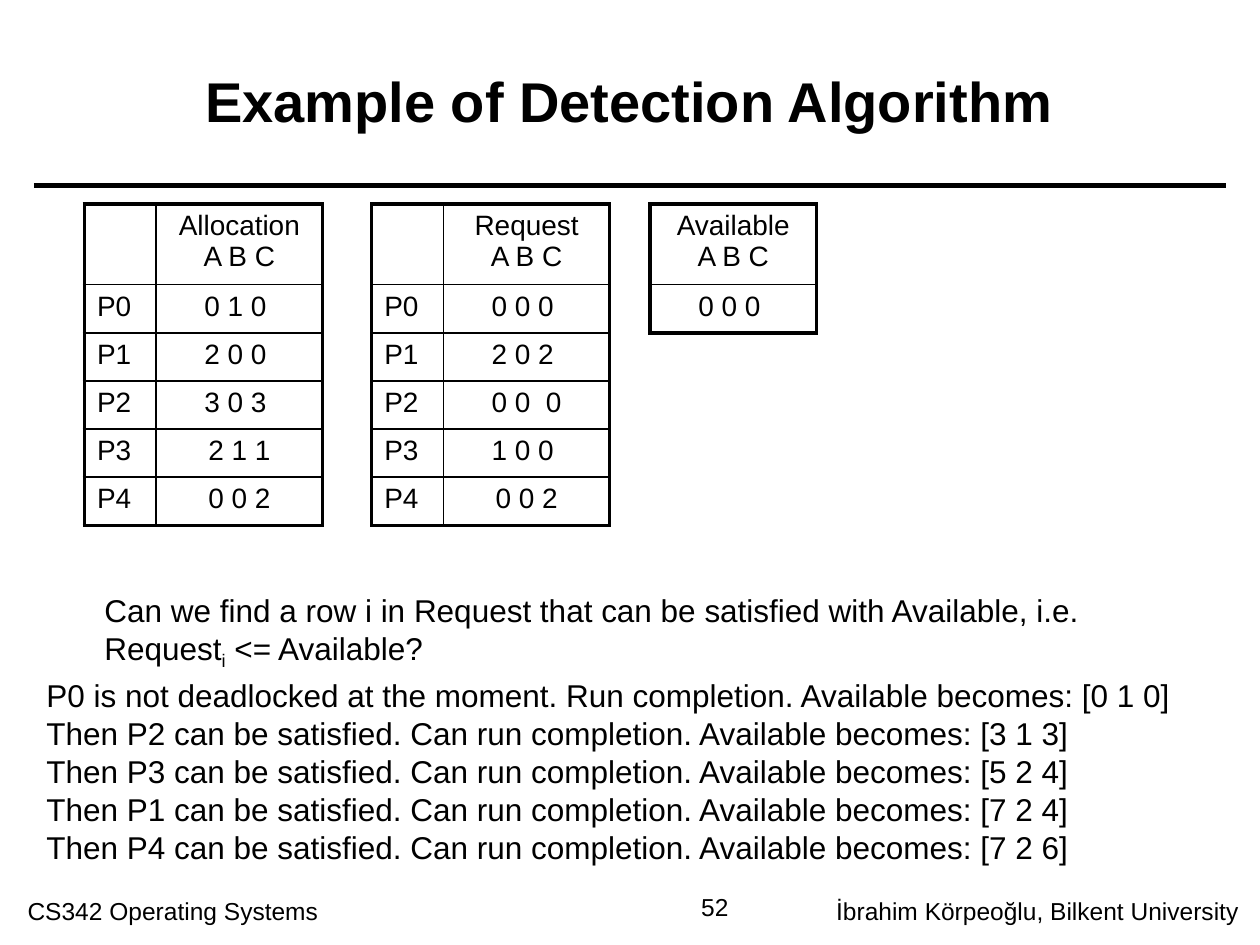
from lxml import etree
from pptx import Presentation
from pptx.dml.color import RGBColor
from pptx.enum.shapes import MSO_CONNECTOR
from pptx.enum.text import MSO_ANCHOR, PP_ALIGN
from pptx.oxml.ns import qn
from pptx.util import Inches, Pt

BLACK = RGBColor(0, 0, 0)
WHITE = RGBColor(255, 255, 255)
LEFT, MID, RIGHT = PP_ALIGN.LEFT, PP_ALIGN.CENTER, PP_ALIGN.RIGHT
TOP, CENTER = MSO_ANCHOR.TOP, MSO_ANCHOR.MIDDLE
STRAIGHT = MSO_CONNECTOR.STRAIGHT
COLS, ROWS = 100, 75
THICK, THIN = 2.25, 1
HEAD, LINE = 6.4, 3.82  # table row heights in grid rows
TAG, DATA = 5.7, 13.2  # table column widths in grid columns


class Page:
    """Draws on one slide; lengths are columns and rows of a fine grid."""

    def __init__(self, deck):
        self.font = "Arial"
        self.dx = deck.slide_width / COLS
        self.dy = deck.slide_height / ROWS
        self.slide = deck.slides.add_slide(deck.slide_layouts[6])
        fill = self.slide.background.fill
        fill.solid()
        fill.fore_color.rgb = WHITE

    def box(self, x, y, w, h):
        return (round(x * self.dx), round(y * self.dy),
                round(w * self.dx), round(h * self.dy))

    def style(self, para, size, align=LEFT, bold=False):
        para.alignment = align
        font = para.font
        font.name, font.size, font.bold = self.font, Pt(size), bold
        font.color.rgb = BLACK

    def rule(self, x, y, end, width):
        a, b, c, _ = self.box(x, y, end, 0)
        line = self.slide.shapes.add_connector(STRAIGHT, a, b, c, b)
        line.line.color.rgb = BLACK
        line.line.width = Pt(width)
        etree.SubElement(line._element.spPr, qn("a:effectLst"))

    def text(self, area, lines, size, align=LEFT, bold=False,
             anchor=TOP, wrap=True):
        """Each line is a string or a list of (string, is subscript) pairs."""
        frame = self.slide.shapes.add_textbox(*self.box(*area)).text_frame
        frame.word_wrap = wrap
        frame.vertical_anchor = anchor
        for i, line in enumerate(lines):
            para = frame.add_paragraph() if i else frame.paragraphs[0]
            self.style(para, size, align, bold)
            parts = [(line, False)] if isinstance(line, str) else line
            for words, sub in parts:
                if words == "\n":
                    para.add_line_break()
                    continue
                run = para.add_run()
                run.text = words
                if sub:
                    run._r.get_or_add_rPr().set("baseline", "-25000")

    def edge(self, cell, sides):
        """Put borders, given as widths by side, ahead of the cell's fill."""
        props = cell._tc.get_or_add_tcPr()
        for i, (side, width) in enumerate(sides.items()):
            line = etree.Element(qn("a:ln" + side), w=str(Pt(width)))
            fill = etree.SubElement(line, qn("a:solidFill"))
            etree.SubElement(fill, qn("a:srgbClr"), val=str(BLACK))
            props.insert(i, line)

    def table(self, x, y, widths, rows):
        last, end = len(rows) - 1, len(widths) - 1
        area = self.box(x, y, sum(widths), HEAD + LINE * last)
        grid = self.slide.shapes.add_table(last + 1, end + 1, *area).table
        grid.first_row = grid.horz_banding = False
        for col, width in zip(grid.columns, widths):
            col.width = round(width * self.dx)
        for r, row in enumerate(rows):
            grid.rows[r].height = round((LINE if r else HEAD) * self.dy)
            for c, words in enumerate(row):
                cell = grid.cell(r, c)
                cell.fill.background()
                para = cell.text_frame.paragraphs[0]
                para.text = words
                self.style(para, 16, MID if c == end else LEFT)
                self.edge(cell, {
                    "L": THIN if c else THICK,
                    "R": THICK if c == end else THIN,
                    "T": THIN if r else THICK,
                    "B": THICK if r == last else THIN})


def tagged(name, values):
    """Rows of a table that names the processes in its first column."""
    return [("", name + "\vA B C")] + [
        (f"P{i}", value) for i, value in enumerate(values)]


def main():
    deck = Presentation()
    deck.slide_width, deck.slide_height = Inches(10), Inches(7.5)
    page = Page(deck)

    page.rule(2.7, 14.7, 97.3, 3)
    page.text((1.2, 70.6, 47.2, 3.9), ["CS342 Operating Systems"], 14)
    page.text((65, 70.6, 34.7, 3.6),
              ["İbrahim Körpeoğlu, Bilkent University"], 14, MID)
    page.text((48.4, 70.3, 10.4, 3.4), ["52"], 14, RIGHT)
    page.text((3.5, 1.7, 92.9, 12.5), ["Example of Detection Algorithm"],
              32, MID, True, CENTER)

    held = ["0 1 0 ", "2 0 0 ", "3 0 3 ", "2 1 1", "0 0 2"]
    asked = ["0 0 0 ", "2 0 2 ", "0 0  0", "1 0 0 ", "0 0 2"]
    page.table(6.7, 16.2, [TAG, DATA], tagged("Allocation", held))
    page.table(29.5, 16.2, [TAG, DATA], tagged("Request", asked))
    page.table(51.6, 16.2, [DATA], [("Available\vA B C",), ("0 0 0 ",)])

    ask = [("Can we find a row i in Request that can be satisfied "
            "with Available, i.e. ", False), ("\n", False),
           ("Request", False), ("i", True), (" <= Available?", False)]
    page.text((7.3, 46.4, 80.2, 7), [ask], 18, wrap=False)

    steps = ["P0 is not deadlocked at the moment. Run completion. "
             "Available becomes: [0 1 0]"]
    steps += [f"Then {name} can be satisfied. Can run completion. "
              f"Available becomes: [{free}]"
              for name, free in [("P2", "3 1 3"), ("P3", "5 2 4"),
                                 ("P1", "7 2 4"), ("P4", "7 2 6")]]
    page.text((2.7, 53.2, 91.3, 19), steps, 18, wrap=False)
    deck.save("out.pptx")


if __name__ == "__main__":
    main()
